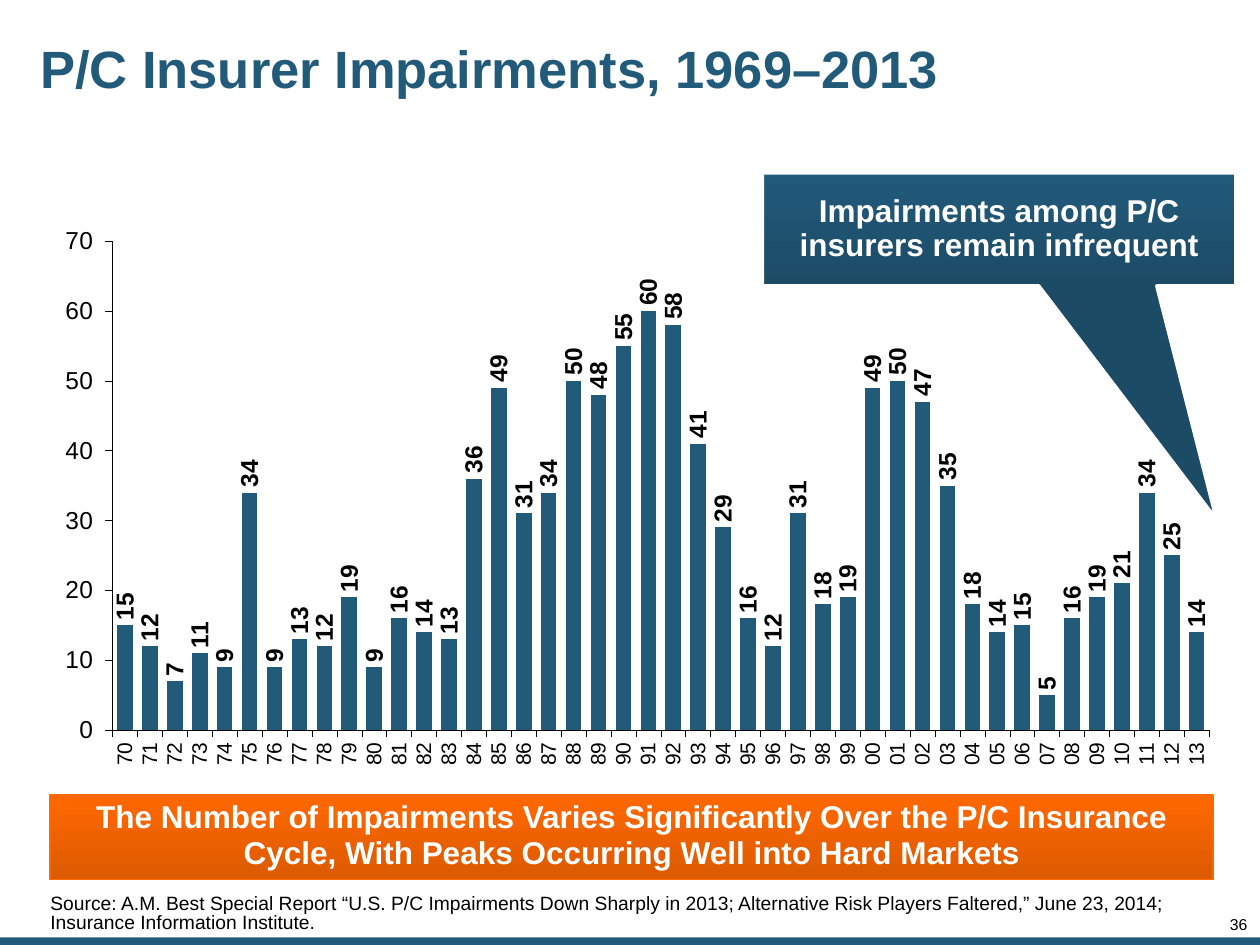
from dataclasses import dataclass

from lxml import etree
from pptx import Presentation
from pptx.chart.data import CategoryChartData
from pptx.dml.color import RGBColor
from pptx.enum.chart import XL_CHART_TYPE, XL_LABEL_POSITION, XL_TICK_MARK
from pptx.enum.shapes import MSO_SHAPE
from pptx.enum.text import MSO_ANCHOR, MSO_AUTO_SIZE, PP_ALIGN
from pptx.oxml import parse_xml
from pptx.oxml.ns import nsdecls, qn
from pptx.util import Inches, Pt


@dataclass(frozen=True)
class Theme:
    """Colours, font and type sizes of the slide."""
    font: str = "Arial"
    blue: RGBColor = RGBColor(0x22, 0x5A, 0x7A)
    dark_blue: RGBColor = RGBColor(0x1C, 0x4B, 0x66)
    orange: RGBColor = RGBColor(0xFF, 0x68, 0x01)
    dark_orange: RGBColor = RGBColor(0xDC, 0x5A, 0x01)
    black: RGBColor = RGBColor(0, 0, 0)
    white: RGBColor = RGBColor(0xFF, 0xFF, 0xFF)
    title: float = 30
    message: float = 18
    axis: float = 14
    years: float = 12
    source: float = 11
    number: float = 9


THEME = Theme()
FIRST_YEAR = 1970
IMPAIRMENTS = [
    15, 12, 7, 11, 9, 34, 9, 13, 12, 19,
    9, 16, 14, 13, 36, 49, 31, 34, 50, 48,
    55, 60, 58, 41, 29, 16, 12, 31, 18, 19,
    49, 50, 47, 35, 18, 14, 15, 5, 16, 19,
    21, 34, 25, 14,
]


def style_font(font, size, color, bold=False):
    """Apply the theme font with a size, colour and weight."""
    font.name, font.size, font.bold = THEME.font, Pt(size), bold
    font.color.rgb = color


def write(s, text, size, color, bold=False, align=PP_ALIGN.LEFT,
          anchor=MSO_ANCHOR.MIDDLE, insets=(0, 0, 0, 0), spacing=0.9):
    """Put one formatted paragraph into a shape."""
    tf = s.text_frame
    tf.text = text
    tf.word_wrap = True
    tf.auto_size = MSO_AUTO_SIZE.NONE
    tf.vertical_anchor = anchor
    tf.margin_left, tf.margin_top, tf.margin_right, tf.margin_bottom = map(Inches, insets)
    p = tf.paragraphs[0]
    p.alignment, p.line_spacing = align, spacing
    style_font(p.runs[0].font, size, color, bold)


def add_panel(slide, preset, box, top, bottom, line, width):
    """Add an outlined shape with a downward gradient."""
    s = slide.shapes.add_shape(preset, *map(Inches, box))
    s.shadow.inherit = False
    s.fill.gradient()
    s.fill.gradient_angle = 270
    for stop, color in zip(s.fill.gradient_stops, (top, bottom)):
        stop.color.rgb = color
    s.fill.gradient_stops[0].position = 0
    s.fill.gradient_stops[1].position = 1
    s.line.color.rgb = line
    s.line.width = Pt(width)
    return s


def add_title(slide, box):
    """Place and format the title placeholder."""
    s = slide.shapes.title
    s.left, s.top, s.width, s.height = map(Inches, box)
    write(s, "P/C Insurer Impairments, 1969–2013", THEME.title, THEME.blue,
          bold=True, insets=(0.05,) * 4)


def rotate_text(element):
    """Turn chart text to read upwards."""
    body = element.find(qn("c:txPr")).find(qn("a:bodyPr"))
    body.set("rot", "-5400000")
    body.set("vert", "horz")


def set_plot_area(chart, x, y, w, h):
    """Fix the inner plot area as fractions of the chart."""
    area = chart.element.find(".//" + qn("c:plotArea")) if hasattr(chart, "element") \
        else chart._chartSpace.find(".//" + qn("c:plotArea"))
    for old in area.findall(qn("c:layout")):
        area.remove(old)
    layout = parse_xml(f"<c:layout {nsdecls('c')}><c:manualLayout/></c:layout>")
    values = dict(layoutTarget="inner", xMode="edge", yMode="edge", x=x, y=y, w=w, h=h)
    for name, value in values.items():
        etree.SubElement(layout[0], qn(f"c:{name}")).set("val", str(value))
    area.insert(0, layout)


def format_axis(axis, size):
    """Format the line, ticks and labels of an axis."""
    axis.has_major_gridlines = False
    axis.major_tick_mark = XL_TICK_MARK.OUTSIDE
    axis.minor_tick_mark = XL_TICK_MARK.NONE
    axis.format.line.color.rgb = THEME.black
    axis.format.line.width = Pt(0.25)
    style_font(axis.tick_labels.font, size, THEME.black)


def add_impairment_chart(slide, box):
    """Add the column chart of yearly impairments."""
    data = CategoryChartData()
    data.categories = [f"{(FIRST_YEAR + i) % 100:02d}" for i in range(len(IMPAIRMENTS))]
    data.add_series("Series 1", IMPAIRMENTS)
    chart = slide.shapes.add_chart(
        XL_CHART_TYPE.COLUMN_CLUSTERED, *map(Inches, box), data).chart
    chart.has_legend = chart.has_title = False
    style_font(chart.font, THEME.axis, THEME.black)
    set_plot_area(chart, 0.05, 0.04, 0.94, 0.89)

    format_axis(chart.category_axis, THEME.years)
    rotate_text(chart.category_axis._element)
    axis = chart.value_axis
    format_axis(axis, THEME.axis)
    axis.minimum_scale, axis.maximum_scale, axis.major_unit = 0, 70, 10
    axis.tick_labels.number_format = r"#,##0_);[Red]\(#,##0\)"
    axis.tick_labels.number_format_is_linked = False

    plot = chart.plots[0]
    plot.gap_width = 60
    plot.vary_by_categories = False
    series = plot.series[0]
    series.format.fill.solid()
    series.format.fill.fore_color.rgb = THEME.blue
    labels = series.data_labels
    labels.show_value = True
    labels.position = XL_LABEL_POSITION.OUTSIDE_END
    style_font(labels.font, THEME.axis, THEME.black, bold=True)
    rotate_text(labels._element)


def add_message(slide, box):
    """Add the orange conclusion banner."""
    s = add_panel(slide, MSO_SHAPE.RECTANGLE, box, THEME.orange,
                  THEME.dark_orange, THEME.orange, 1)
    write(s, "The Number of Impairments Varies Significantly Over the P/C Insurance "
          "Cycle, With Peaks Occurring Well into Hard Markets", THEME.message,
          THEME.white, bold=True, align=PP_ALIGN.CENTER,
          insets=(0.1, 0.05, 0.1, 0.07), spacing=0.95)


def add_callout(slide, box):
    """Add the callout pointing at the latest years."""
    s = add_panel(slide, MSO_SHAPE.RECTANGULAR_CALLOUT, box, THEME.blue,
                  THEME.dark_blue, THEME.white, 2.25)
    s.adjustments[0], s.adjustments[1] = 0.46, 2.57
    write(s, "Impairments among P/C insurers remain infrequent", THEME.message,
          THEME.white, bold=True, align=PP_ALIGN.CENTER, insets=(0.1,) * 4)


def add_footer(slide, source_box, number_box, bar_box):
    """Add the bottom bar, source note and page number."""
    bar = slide.shapes.add_shape(MSO_SHAPE.RECTANGLE, *map(Inches, bar_box))
    bar.shadow.inherit = False
    bar.fill.solid()
    bar.fill.fore_color.rgb = THEME.blue
    bar.line.fill.background()
    source = slide.shapes.add_textbox(*map(Inches, source_box))
    write(source, "Source: A.M. Best Special Report “U.S. P/C Impairments Down Sharply "
          "in 2013; Alternative Risk Players Faltered,” June 23, 2014; Insurance "
          "Information Institute.", THEME.source, THEME.black,
          anchor=MSO_ANCHOR.BOTTOM, insets=(0.4, 0, 0, 0.09), spacing=0.85)
    number = slide.shapes.add_textbox(*map(Inches, number_box))
    write(number, "36", THEME.number, THEME.black, align=PP_ALIGN.RIGHT,
          anchor=MSO_ANCHOR.TOP, spacing=0.85)


def main():
    """Build and save the slide."""
    prs = Presentation()
    prs.slide_width, prs.slide_height = Inches(10), Inches(7.5)
    slide = prs.slides.add_slide(prs.slide_layouts[5])
    add_title(slide, (0.27, 0.1, 8.09, 0.94))
    add_impairment_chart(slide, (0.43, 1.74, 9.26, 4.36))
    add_footer(slide, (0, 6.73, 9.58, 0.77), (9.41, 7.28, 0.49, 0.13),
               (0, 7.44, 10, 0.06))
    add_message(slide, (0.4, 6.31, 9.23, 0.67))
    add_callout(slide, (6.05, 1.37, 3.76, 0.9))
    prs.save("out.pptx")


if __name__ == "__main__":
    main()
